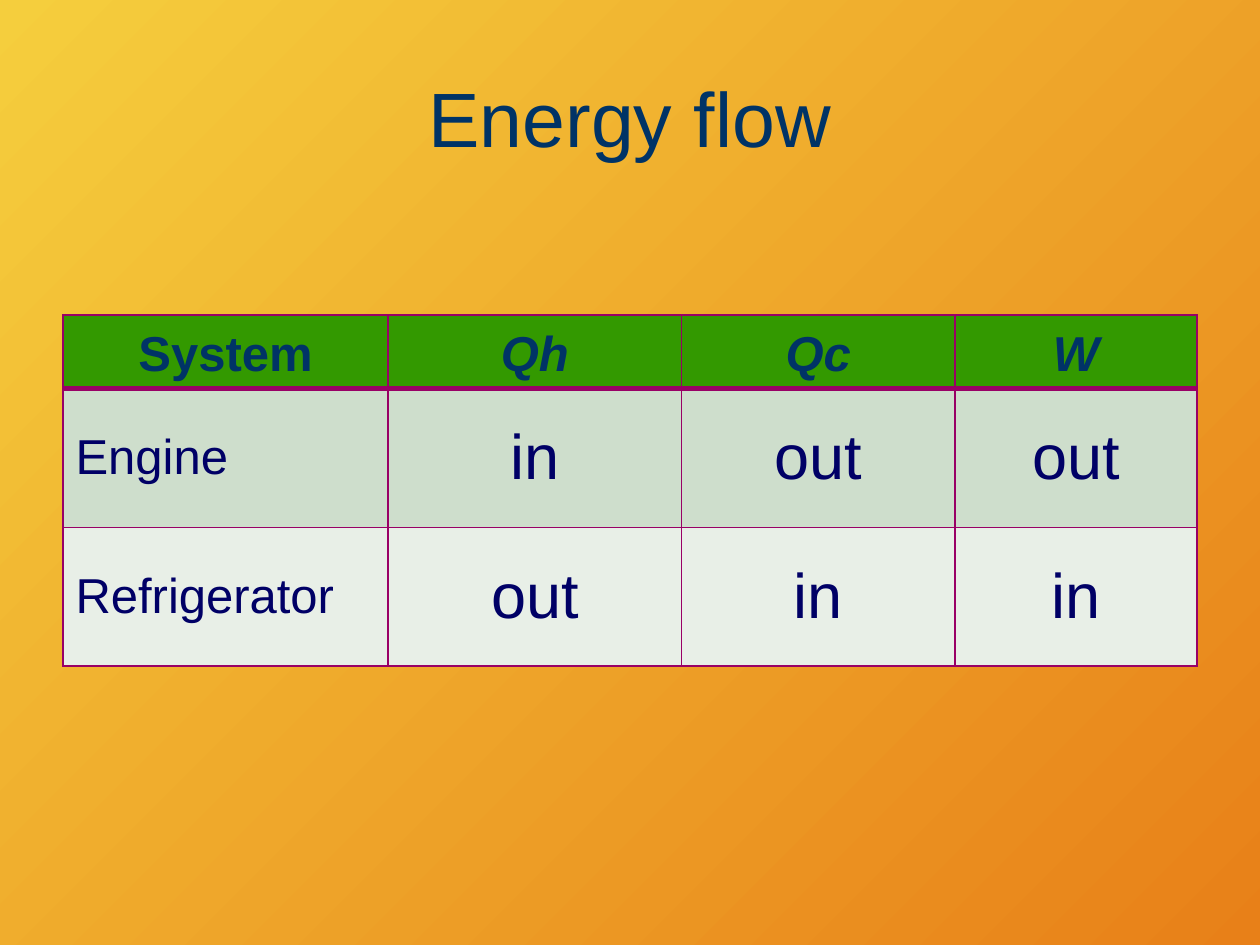
import dataclasses

import lxml.etree
import pptx
import pptx.dml.color
import pptx.enum.text
import pptx.oxml.ns
import pptx.util

Cm = pptx.util.Cm
Pt = pptx.util.Pt
RGB = pptx.dml.color.RGBColor
Align = pptx.enum.text.PP_ALIGN
Anchor = pptx.enum.text.MSO_ANCHOR

GOLD = RGB(0xF5, 0xCE, 0x3D)
ORANGE = RGB(0xE8, 0x80, 0x18)
BLUE = RGB(0x00, 0x33, 0x66)
NAVY = RGB(0x00, 0x00, 0x66)
PLUM = RGB(0x99, 0x00, 0x66)
GREEN = RGB(0x33, 0x99, 0x00)
SAGE = RGB(0xCE, 0xDE, 0xCC)
MIST = RGB(0xE8, 0xEF, 0xE7)

WIDTHS = (6.55, 5.92, 5.51, 4.88)


@dataclasses.dataclass(frozen=True)
class Row:
    words: tuple[str, ...]
    high: float
    fill: RGB
    top: float = 1
    base: float = 1
    head: bool = False


ROWS = (
    Row(("System", "Qh", "Qc", "W"), 1.48, GREEN, base=3, head=True),
    Row(("Engine", "in", "out", "out"), 2.8, SAGE, top=3),
    Row(("Refrigerator", "out", "in", "in"), 2.8, MIST),
)


def write(frame, text: str, *, size: float, color: RGB, align=Align.CENTER,
          bold: bool = False, slant: bool = False) -> None:
    para = frame.paragraphs[0]
    para.alignment = align
    run = para.add_run()
    run.text = text
    font = run.font
    font.name = "Arial"
    font.size = Pt(size)
    font.bold = bold
    font.italic = slant
    font.color.rgb = color


def edge(cell, side: str, width: float) -> None:
    """Add one border; sides must come in the order L, R, T, B, before the fill."""
    qn = pptx.oxml.ns.qn
    props = cell._tc.get_or_add_tcPr()
    line = lxml.etree.SubElement(props, qn(f"a:ln{side}"), w=str(Pt(width)))
    fill = lxml.etree.SubElement(line, qn("a:solidFill"))
    lxml.etree.SubElement(fill, qn("a:srgbClr"), val=str(PLUM))


def paint(slide) -> None:
    fill = slide.background.fill
    fill.gradient()
    fill.gradient_angle = 315
    for stop, color, place in zip(fill.gradient_stops, (GOLD, ORANGE), (0, 1)):
        stop.color.rgb = color
        stop.position = place


def title(slide, text: str) -> None:
    box = slide.shapes.add_textbox(Cm(1.27), Cm(0.76), Cm(22.86), Cm(3.18))
    frame = box.text_frame
    frame.word_wrap = True
    frame.vertical_anchor = Anchor.MIDDLE
    write(frame, text, size=44, color=BLUE)


def fill_cell(cell, row: Row, col: int) -> None:
    for side, width in zip("LRTB", (1, 1, row.top, row.base)):
        edge(cell, side, width)
    cell.fill.solid()
    cell.fill.fore_color.rgb = row.fill
    cell.vertical_anchor = Anchor.BOTTOM if row.head else Anchor.MIDDLE
    label = col == 0
    write(cell.text_frame, row.words[col],
          size=28 if row.head or label else 36,
          color=BLUE if row.head else NAVY,
          align=Align.LEFT if label and not row.head else Align.CENTER,
          bold=row.head, slant=row.head and not label)


def grid(slide) -> None:
    high = sum(row.high for row in ROWS)
    table = slide.shapes.add_table(
        len(ROWS), len(WIDTHS), Cm(1.27), Cm(6.35), Cm(sum(WIDTHS)), Cm(high)
    ).table
    table.first_row = table.horz_banding = False
    for col, width in zip(table.columns, WIDTHS):
        col.width = Cm(width)
    for i, row in enumerate(ROWS):
        table.rows[i].height = Cm(row.high)
        for j in range(len(WIDTHS)):
            fill_cell(table.cell(i, j), row, j)


def main() -> None:
    deck = pptx.Presentation()
    deck.slide_width, deck.slide_height = Cm(25.4), Cm(19.05)
    slide = deck.slides.add_slide(deck.slide_layouts[6])
    paint(slide)
    title(slide, "Energy flow")
    grid(slide)
    deck.save("out.pptx")


if __name__ == "__main__":
    main()
